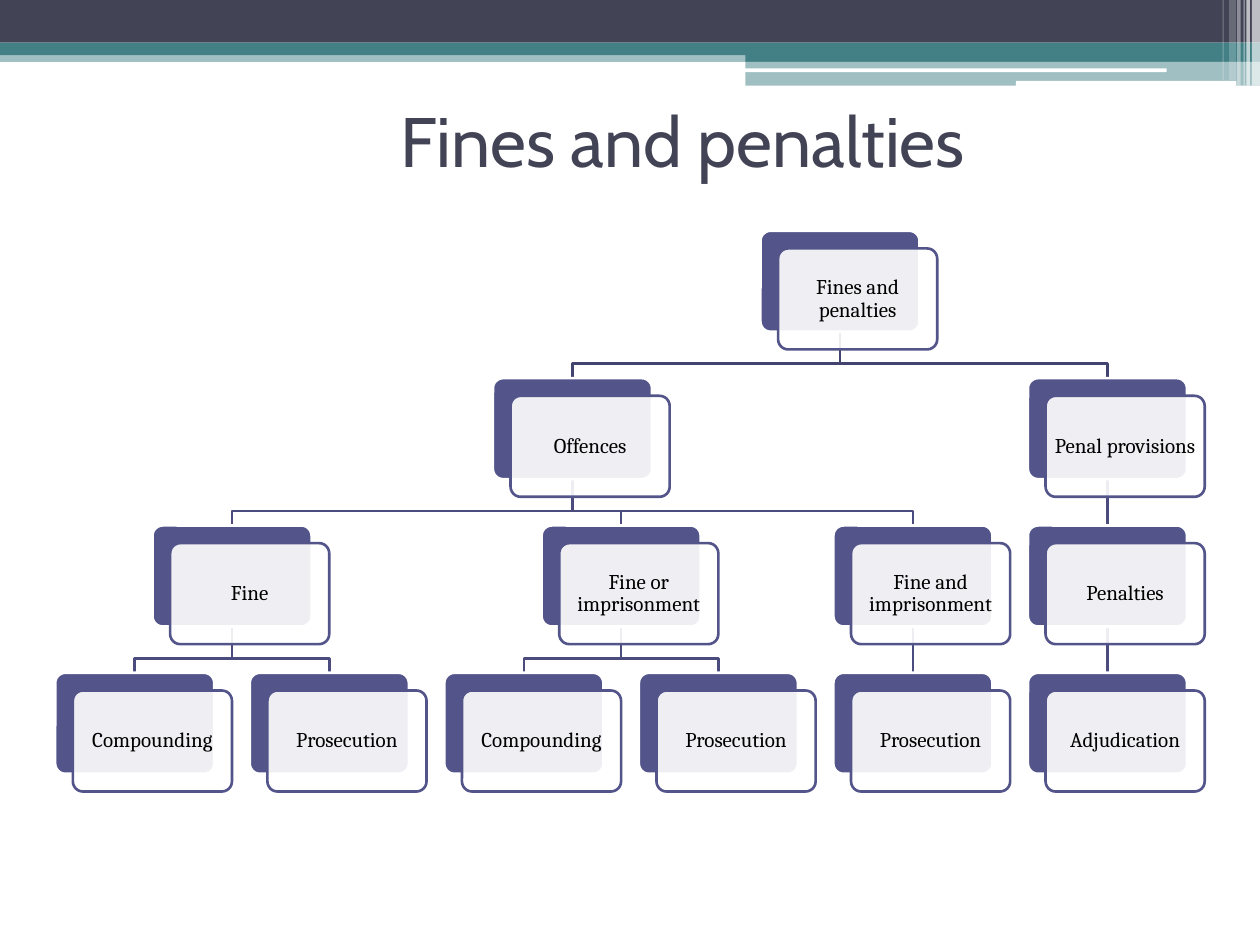
"""Build the slide "Fines and penalties": a hierarchy of offences and penal provisions."""
from lxml.etree import SubElement
from pptx import Presentation
from pptx.dml.color import RGBColor
from pptx.enum.shapes import MSO_CONNECTOR as Link, MSO_SHAPE as Form
from pptx.enum.text import MSO_ANCHOR as Anchor, PP_ALIGN as Align
from pptx.oxml.ns import qn
from pptx.util import Pt

TITLE = "Fines and penalties"
TREE = ("Fines and penalties", [
    ("Offences", [
        ("Fine", [("Compounding", []), ("Prosecution", [])]),
        ("Fine or imprisonment", [("Compounding", []), ("Prosecution", [])]),
        ("Fine and imprisonment", [("Prosecution", [])]),
    ]),
    ("Penal provisions", [("Penalties", [("Adjudication", [])])]),
])

THEME = {
    "ink": "424456", "teal": "438086", "white": "FFFFFF", "card": "53548A",
    "root_link": "42436F", "link": "4B4C7D", "text": "000000",
    "title_font": "Cabin", "body_font": "Cambria",
    "title_size": 40, "body_size": 12, "line": 1.5,
}

BANDS = [
    (0, 28.8, 720, 6.6, "teal", 50),
    (0, 0, 720, 24.4, "ink", 100),
    (0, 24.4, 720, 7.2, "teal", 100),
    (426, 28, 294, 7.2, "teal", 100),
    (426, 34.8, 294, 14.1, "teal", 50),
]
PILLS = [(425.5, 39.1, 241.2, 2.2), (580.5, 46.3, 126, 2.9)]
STRIPES = [
    (715.4, 4.6, 49, 65), (712.2, 2, 49, 65), (710.6, 0.7, 49, 60),
    (707, 2, 49, 40), (702.3, 4, 46, 20), (698.6, 0.7, 46, 30),
]

CARD_WIDTH, CARD_HEIGHT, CARD_OFFSET = 90.9, 57.7, 10.1
FIRST_CENTER, COLUMN_PITCH = 77, 111.17
FIRST_TOP, ROW_PITCH = 131.9, 84.2
BEND = 18.2


def color(name):
    return RGBColor.from_string(THEME[name])


def add_box(page, form, left, top, width, height, fill, opacity=100, line=None):
    """Add a flat preset shape with an optional outline."""
    box = page.shapes.add_shape(form, Pt(left), Pt(top), Pt(width), Pt(height))
    box.shadow.inherit = False
    box.fill.solid()
    box.fill.fore_color.rgb = color(fill)
    if opacity < 100:
        tint = box.element.spPr.find(f"{qn('a:solidFill')}/{qn('a:srgbClr')}")
        SubElement(tint, qn("a:alpha"), val=str(opacity * 1000))
    if line:
        box.line.color.rgb = color(line)
        box.line.width = Pt(THEME["line"])
    else:
        box.line.fill.background()
    return box


def write(box, text, *, font, size, ink, inset=3.5, spacing=1.0):
    """Put centred text into a box."""
    frame = box.text_frame
    frame.word_wrap = True
    frame.vertical_anchor = Anchor.MIDDLE
    frame.margin_left = frame.margin_right = Pt(inset)
    frame.margin_top = frame.margin_bottom = Pt(inset)
    para = frame.paragraphs[0]
    para.alignment = Align.CENTER
    para.line_spacing = spacing
    span = para.add_run()
    span.text = text
    span.font.name = THEME[font]
    span.font.size = Pt(THEME[size])
    span.font.color.rgb = color(ink)


def place(node, level=0, column=0):
    """Return the placed node and the next free leaf column."""
    text, children = node
    placed = []
    for child in children:
        spot, column = place(child, level + 1, column)
        placed.append(spot)
    if placed:
        center = (placed[0]["center"] + placed[-1]["center"]) / 2
    else:
        center = FIRST_CENTER + column * COLUMN_PITCH
        column += 1
    top = FIRST_TOP + level * ROW_PITCH
    return {"text": text, "center": center, "top": top,
            "level": level, "children": placed}, column


def add_card(page, node):
    """Draw a node as a solid card under an offset labelled card, then its children."""
    left, top = node["center"] - CARD_WIDTH / 2, node["top"]
    size = CARD_WIDTH, CARD_HEIGHT
    node["back"] = add_box(page, Form.ROUNDED_RECTANGLE, left, top, *size,
                           "card", line="white")
    front = add_box(page, Form.ROUNDED_RECTANGLE, left + CARD_OFFSET,
                    top + CARD_OFFSET, *size, "white", 90, "card")
    for box in (node["back"], front):
        box.adjustments[0] = 0.1
    write(front, node["text"], font="body_font", size="body_size", ink="text", spacing=0.9)
    for child in node["children"]:
        add_card(page, child)


def add_links(page, node, bottom_card):
    """Link a node to its children, behind all cards."""
    start = Pt(node["center"]), Pt(node["top"] + CARD_HEIGHT)
    bend = Pt(node["top"] + CARD_HEIGHT + BEND)
    for child in node["children"]:
        end = Pt(child["center"]), Pt(child["top"])
        if abs(start[0] - end[0]) < Pt(1):
            link = page.shapes.add_connector(Link.STRAIGHT, *start, *end)
            link.begin_connect(node["back"], 2)
            link.end_connect(child["back"], 0)
            SubElement(link.element.spPr, qn("a:effectLst"))
        else:
            outline = page.shapes.build_freeform(*start)
            outline.add_line_segments([(start[0], bend), (end[0], bend), end], close=False)
            link = outline.convert_to_shape()
            link.fill.background()
            link.shadow.inherit = False
        link.line.color.rgb = color("link" if node["level"] else "root_link")
        link.line.width = Pt(THEME["line"])
        bottom_card.element.addprevious(link.element)
        add_links(page, child, bottom_card)


def main():
    deck = Presentation()
    deck.slide_width, deck.slide_height = Pt(720), Pt(540)
    page = deck.slides.add_slide(deck.slide_layouts[6])

    for band in BANDS:
        add_box(page, Form.RECTANGLE, *band)
    for pill in PILLS:
        add_box(page, Form.ROUNDED_RECTANGLE, *pill, "white")
    for left, width, height, opacity in STRIPES:
        add_box(page, Form.RECTANGLE, left, 0, width, height, "white", opacity)

    title = page.shapes.add_textbox(Pt(96), Pt(51), Pt(588), Pt(57))
    write(title, TITLE, font="title_font", size="title_size", ink="ink")

    root, _ = place(TREE)
    add_card(page, root)
    add_links(page, root, root["back"])
    deck.save("out.pptx")


if __name__ == "__main__":
    main()
